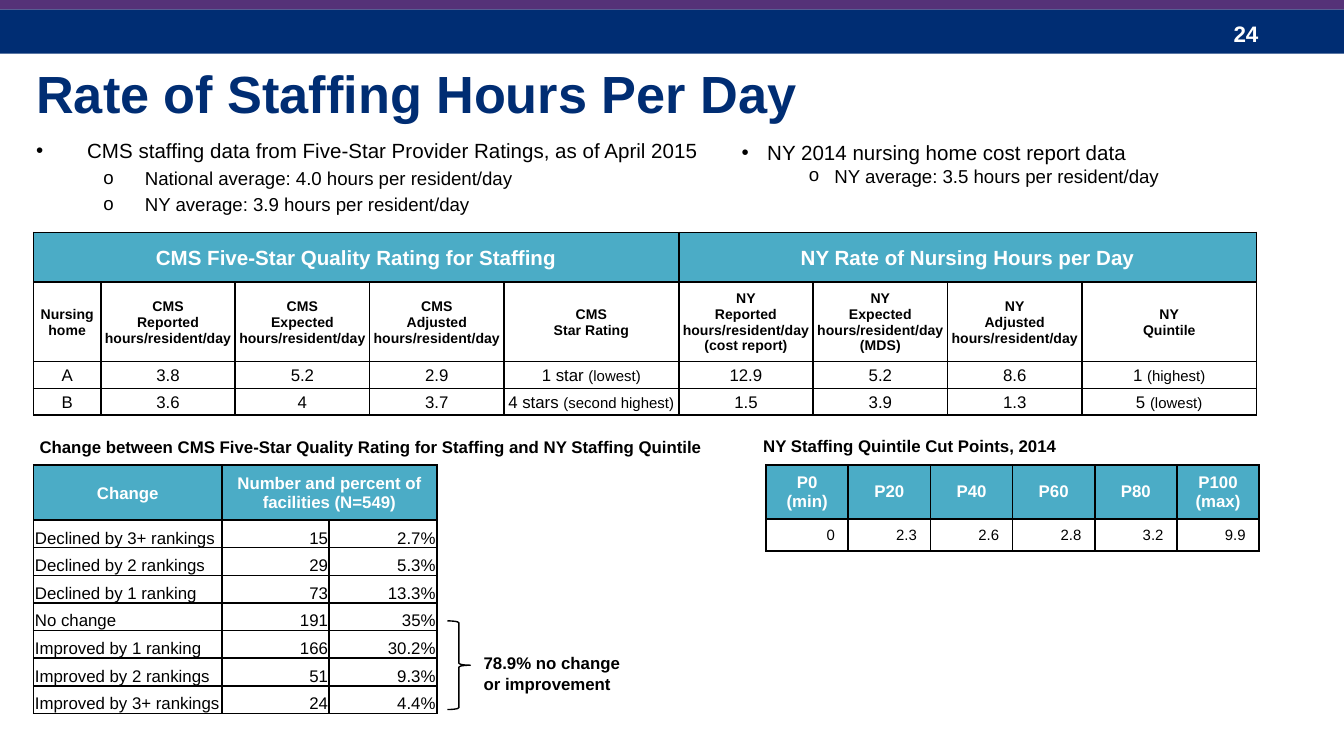
from lxml.etree import SubElement
from pptx import Presentation
from pptx.dml.color import RGBColor as RGB
from pptx.enum.shapes import MSO_SHAPE as SHAPE
from pptx.enum.text import MSO_ANCHOR as ANCHOR, PP_ALIGN as ALIGN
from pptx.oxml.ns import qn
from pptx.util import Pt

PX = 9144  # 100 px to the inch
NAVY = RGB(0x00, 0x2D, 0x73)
PURPLE = RGB(0x55, 0x32, 0x78)
TEAL = RGB(0x4B, 0xAC, 0xC6)
BLACK = RGB(0, 0, 0)
WHITE = RGB(255, 255, 255)
LEFT, MID, RIGHT = ALIGN.LEFT, ALIGN.CENTER, ALIGN.RIGHT
TIGHT = (1, 1, 1, 0)
ROOMY = (10, 5, 10, 5)

HEADS = ["Nursing home", "CMS\nReported hours/resident/day",
         "CMS\nExpected hours/resident/day", "CMS\nAdjusted hours/resident/day",
         "CMS\nStar Rating", "NY\nReported hours/resident/day (cost report)",
         "NY\nExpected hours/resident/day (MDS)",
         "NY\nAdjusted hours/resident/day", "NY\nQuintile"]
HOMES = [
    ["A", "3.8", "5.2", "2.9", "1 star (lowest)", "12.9", "5.2", "8.6", "1 (highest)"],
    ["B", "3.6", "4", "3.7", "4 stars (second highest)", "1.5", "3.9", "1.3", "5 (lowest)"],
]
CHANGES = [
    ["Declined by 3+ rankings", "15", "2.7%"],
    ["Declined by 2 rankings", "29", "5.3%"],
    ["Declined by 1 ranking", "73", "13.3%"],
    ["No change", "191", "35%"],
    ["Improved by 1 ranking", "166", "30.2%"],
    ["Improved by 2 rankings", "51", "9.3%"],
    ["Improved by 3+ rankings", "24", "4.4%"],
]
CUTS = [("P0 (min)", "0"), ("P20", "2.3"), ("P40", "2.6"),
        ("P60", "2.8"), ("P80", "3.2"), ("P100 (max)", "9.9")]


def emu(*nums):
    return [round(n * PX) for n in nums]


def style(font, size, color=BLACK, bold=False):
    look = {"name": "Arial", "size": Pt(size), "bold": bold}
    for key, val in look.items():
        setattr(font, key, val)
    font.color.rgb = color


def write(frame, text, size, color=BLACK, bold=False, align=LEFT, note=None):
    """Fill a frame, one paragraph a line; note is the size of a bracketed tail."""
    for i, line in enumerate(text.split("\n")):
        para = frame.paragraphs[0] if i == 0 else frame.add_paragraph()
        para.alignment = align
        head, mark, tail = line.partition("(") if note else (line, "", "")
        for part, pts in ((head, size), (mark + tail, note)):
            if part:
                run = para.add_run()
                run.text = part
                style(run.font, pts, color, bold)


def add_box(slide, box, anchor=ANCHOR.TOP):
    frame = slide.shapes.add_textbox(*emu(*box)).text_frame
    frame.word_wrap = True
    frame.vertical_anchor = anchor
    return frame


def add_form(slide, kind, box, fill, line=None):
    form = slide.shapes.add_shape(kind, *emu(*box))
    form.shadow.inherit = False
    form.fill.solid()
    form.fill.fore_color.rgb = fill
    if line is None:
        form.line.fill.background()
    else:
        form.line.color.rgb = line
        form.line.width = Pt(0.75)


def add_list(slide, box, items, indents, gap=0):
    """Items are (level, text); indents give margin and hang for each level."""
    frame = add_box(slide, box)
    for i, (level, text) in enumerate(items):
        para = frame.paragraphs[0] if i == 0 else frame.add_paragraph()
        para.level = level
        if i:
            para.space_before = Pt(gap)
        margin, hang = emu(*indents[level])
        props = para._p.get_or_add_pPr()
        props.set("marL", str(margin))
        props.set("indent", str(-hang))
        SubElement(props, qn("a:buFont"), typeface="Arial")
        SubElement(props, qn("a:buChar"), char="•o"[level])
        run = para.add_run()
        run.text = text
        style(run.font, 11 - level)


def add_grid(slide, left, top, cols, rows):
    box = emu(left, top, sum(cols), sum(rows))
    grid = slide.shapes.add_table(len(rows), len(cols), *box).table
    grid.first_row = grid.horz_banding = False
    for col, wide in zip(grid.columns, emu(*cols)):
        col.width = wide
    for row, high in zip(grid.rows, emu(*rows)):
        row.height = high
    for cell in grid.iter_cells():
        props = cell._tc.get_or_add_tcPr()
        for side in "LRTB":
            edge = SubElement(props, qn(f"a:ln{side}"), w=str(Pt(1)))
            paint = SubElement(edge, qn("a:solidFill"))
            SubElement(paint, qn("a:srgbClr"), val=str(BLACK))
        cell.fill.background()
    return grid


def put(cell, text, size, inset=TIGHT, anchor=ANCHOR.MIDDLE, align=MID, fill=None, **look):
    sides = ("left", "top", "right", "bottom")
    for side, gap in zip(sides, emu(*inset)):
        setattr(cell, f"margin_{side}", gap)
    cell.vertical_anchor = anchor
    if fill is not None:
        cell.fill.solid()
        cell.fill.fore_color.rgb = fill
    write(cell.text_frame, text, size, align=align, **look)


def put_head(cell, text, size=9, **more):
    put(cell, text, size, fill=TEAL, color=WHITE, bold=True, **more)


def add_banner(slide):
    add_form(slide, SHAPE.RECTANGLE, (0, 7, 1000, 33), NAVY)
    number = add_box(slide, (908, 10, 75, 30), ANCHOR.MIDDLE)
    write(number, "24", 12, WHITE, True)
    add_form(slide, SHAPE.RECTANGLE, (0, -2, 1000, 9), PURPLE)


def add_title(slide, box):
    title = slide.shapes.title
    title.left, title.top, title.width, title.height = emu(*box)
    title.text_frame.vertical_anchor = ANCHOR.MIDDLE
    write(title.text_frame, "Rate of Staffing Hours Per Day", 28, NAVY, True)


def add_ratings(slide, left, top):
    cols = [50, 100, 100, 100, 130, 100, 100, 100, 130]
    grid = add_grid(slide, left, top, cols, [37, 59, 20, 20])
    groups = [(0, 4, "CMS Five-Star Quality Rating for Staffing"),
              (5, 8, "NY Rate of Nursing Hours per Day")]
    for first, last, text in groups:
        grid.cell(0, first).merge(grid.cell(0, last))
        put_head(grid.cell(0, first), text, 11)
    for c, text in enumerate(HEADS):
        put(grid.cell(1, c), text, 7.5, bold=True)
    for r, home in enumerate(HOMES, 2):
        for c, text in enumerate(home):
            put(grid.cell(r, c), text, 9, note=8)


def add_changes(slide, left, top):
    label = add_box(slide, (left - 8, top - 26, 517, 25))
    write(label, "Change between CMS Five-Star Quality Rating for Staffing "
          "and NY Staffing Quintile", 9, bold=True, align=MID)
    count = len(CHANGES)
    grid = add_grid(slide, left, top, [140, 80, 80], [41] + [144 / count] * count)
    grid.cell(0, 1).merge(grid.cell(0, 2))
    put_head(grid.cell(0, 0), "Change")
    put_head(grid.cell(0, 1), "Number and percent of facilities (N=549)")
    for r, row in enumerate(CHANGES, 1):
        for c, text in enumerate(row):
            put(grid.cell(r, c), text, 9, anchor=ANCHOR.BOTTOM,
                align=RIGHT if c else LEFT)
    add_form(slide, SHAPE.RIGHT_BRACE, (left + 308, top + 116, 17, 66), WHITE, BLACK)
    remark = add_box(slide, (left + 325, top + 135, 125, 40))
    write(remark, "78.9% no change or improvement", 9, bold=True)


def add_cuts(slide, left, top):
    label = add_box(slide, (left - 12, top - 27, 375, 25))
    write(label, "NY Staffing Quintile Cut Points, 2014", 9, bold=True)
    count = len(CUTS)
    grid = add_grid(slide, left, top, [367 / count] * count, [40, 24])
    for c, (name, value) in enumerate(CUTS):
        put_head(grid.cell(0, c), name, inset=ROOMY)
        put(grid.cell(1, c), value, 8, inset=ROOMY, align=RIGHT)


def main():
    deck = Presentation()
    deck.slide_width, deck.slide_height = emu(1000, 562.5)
    slide = deck.slides.add_slide(deck.slide_layouts[5])
    add_banner(slide)
    add_title(slide, (17, 40, 825, 58))
    add_list(slide, (17, 98, 525, 50), [
        (0, "CMS staffing data from Five-Star Provider Ratings, as of April 2015"),
        (1, "National average: 4.0 hours per resident/day"),
        (1, "NY average: 3.9 hours per resident/day"),
    ], [(38, 38), (81, 31)], gap=2)
    add_list(slide, (542, 99, 333, 45), [
        (0, "NY 2014 nursing home cost report data"),
        (1, "NY average: 3.5 hours per resident/day"),
    ], [(19, 19), (69, 19)])
    add_ratings(slide, 25, 173)
    add_changes(slide, 25, 346)
    add_cuts(slide, 570, 346)
    deck.save("out.pptx")


if __name__ == "__main__":
    main()
